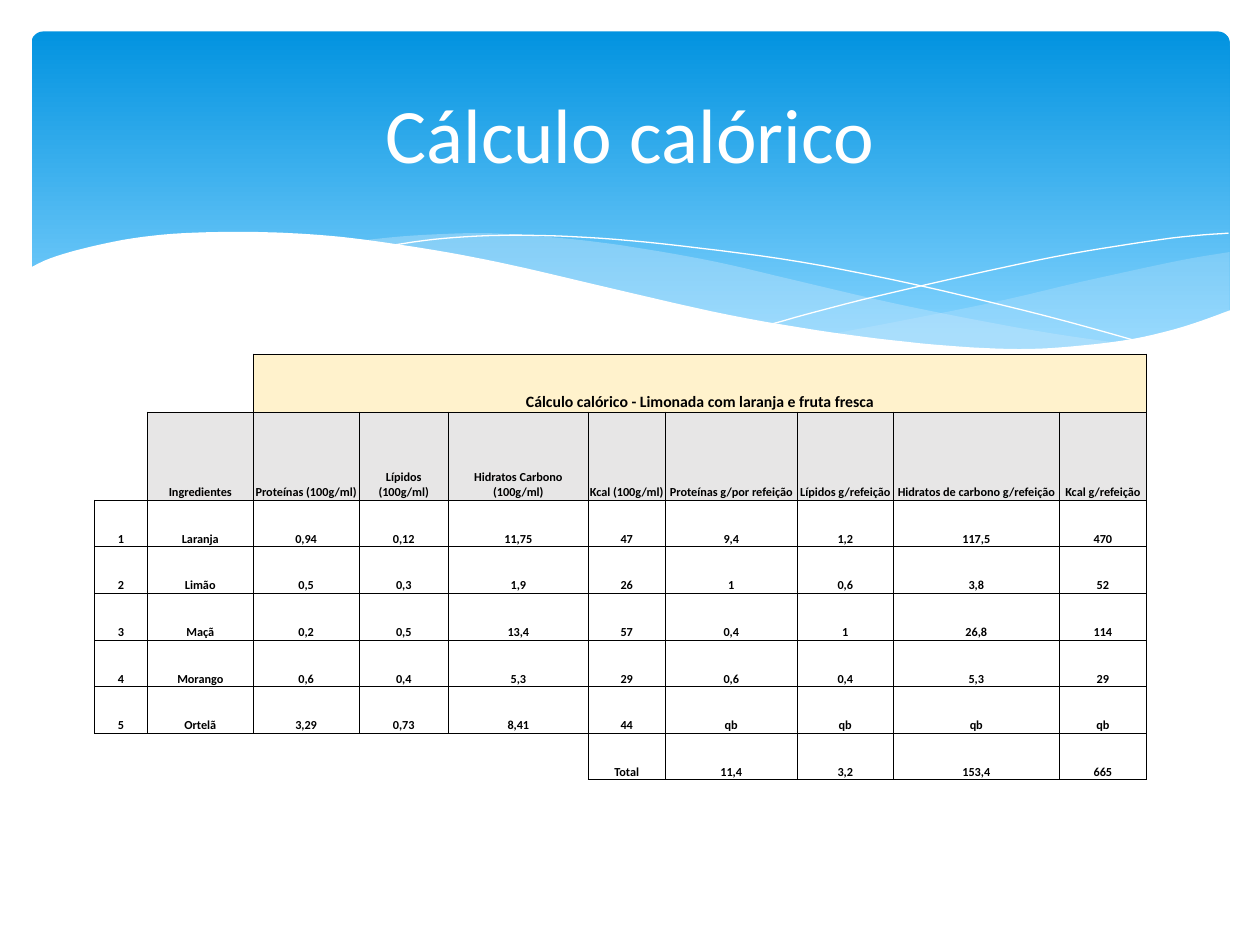
"""Build the calorie table slide with its blue wave header."""
from pptx import Presentation, util as u
from pptx.dml.color import RGBColor
from pptx.enum import shapes, text
from pptx.oxml import parse_xml, ns

WHITE = RGBColor(255, 255, 255)
BLACK = RGBColor(0, 0, 0)
DEEP = RGBColor(0x02, 0x93, 0xE0)
SKY = RGBColor(0x83, 0xD3, 0xFE)
PALE = RGBColor(0xC6, 0xE7, 0xFC)
CREAM = RGBColor(0xFF, 0xF2, 0xCC)
GREY = RGBColor(0xE7, 0xE6, 0xE6)


def smooth(knots, steps=5):
    """Return a Catmull-Rom curve through the knots, in thousandths of an inch."""
    ends = [knots[0], *knots, knots[-1]]
    curve = []
    for a, b, c, d in zip(ends, ends[1:], ends[2:], ends[3:]):
        for t in (i / steps for i in range(steps)):
            curve.append([round(500 * (2 * q + (r - p) * t + (2 * p - 5 * q + 4 * r - s) * t**2
                                       + (3 * q - p - 3 * r + s) * t**3))
                          for p, q, r, s in zip(a, b, c, d)])
    return curve + [[round(1000 * v) for v in knots[-1]]]


def wave(edges, color=None, alpha=100):
    """Draw a filled wave, or a thin white line when no color is given."""
    dots = [dot for edge in edges for dot in smooth(edge)]
    pen = page.shapes.build_freeform(*dots[0], scale=914.4)
    pen.add_line_segments(dots[1:], close=color is not None)
    form = pen.convert_to_shape()
    form.shadow.inherit = False
    if color is None:
        form.fill.background()
        form.line.color.rgb = WHITE
        form.line.width = u.Pt(0)
        return
    form.line.fill.background()
    form.fill.solid()
    form.fill.fore_color.rgb = color
    if alpha < 100:
        tint = form.fill._xPr.find(".//" + ns.qn("a:srgbClr"))
        tint.append(parse_xml(f'<a:alpha {ns.nsdecls("a")} val="{alpha * 1000}"/>'))


deck = Presentation()
deck.slide_width, deck.slide_height = u.Inches(10), u.Inches(7.5)
page = deck.slides.add_slide(deck.slide_layouts[5])
page.background.fill.solid()
page.background.fill.fore_color.rgb = WHITE

band = page.shapes.add_shape(shapes.MSO_SHAPE.ROUNDED_RECTANGLE, *map(u.Inches, (0.25, 0.25, 9.51, 2.7)))
band.adjustments[0] = 0.034
band.shadow.inherit = False
band.line.fill.background()
band.fill.gradient()
band.fill.gradient_angle = 270
for stop, color, place in zip(band.fill.gradient_stops, (DEEP, SKY), (0, 0.9)):
    stop.color.rgb = color
    stop.position = place

wave([[(9.76, 2), (9.35, 2.07), (8.61, 2.23), (7.79, 2.42), (6.61, 2.65)],
      [(6.61, 2.65), (7.05, 2.71), (7.57, 2.76), (8.03, 2.78), (8.54, 2.76),
       (8.97, 2.7), (9.42, 2.59), (9.76, 2.47)]], PALE, 29)
wave([[(8.93, 2.73), (8.37, 2.65), (7.75, 2.54), (7.06, 2.4), (6.29, 2.22), (5.69, 2.08),
       (5.14, 1.98), (4.65, 1.91), (4.2, 1.87), (3.8, 1.85), (3.28, 1.87), (2.86, 1.91)],
      [(2.86, 1.91), (3.42, 1.99), (4.04, 2.11), (4.91, 2.32), (5.66, 2.48), (6.34, 2.61),
       (6.95, 2.7), (7.48, 2.76), (7.96, 2.78), (8.48, 2.77), (8.93, 2.73)]], PALE, 40)
wave([[(3.09, 1.95), (3.44, 1.9), (3.87, 1.87), (4.33, 1.87), (4.89, 1.9), (5.56, 1.97),
       (6.36, 2.08), (7.27, 2.26), (8.31, 2.51), (9.07, 2.72)]])
wave([[(6.13, 2.57), (6.72, 2.41), (7.48, 2.23), (8.36, 2.04), (8.95, 1.94),
       (9.38, 1.88), (9.75, 1.85)]])
wave([[(9.77, 2.46), (9.4, 2.59), (8.99, 2.69), (8.5, 2.75), (8.09, 2.77), (7.61, 2.75),
       (7.08, 2.7), (6.48, 2.62), (5.79, 2.5), (5.03, 2.33), (4.18, 2.13), (3.65, 2.02),
       (3.16, 1.94), (2.71, 1.88), (2.3, 1.85), (1.93, 1.84), (1.46, 1.85), (1.06, 1.89),
       (0.67, 1.97), (0.4, 2.05), (0.23, 2.13)],
      [(0.23, 3.29), (9.77, 3.29)]], WHITE)

title = page.shapes.title
page.shapes.element.append(title.element)
title.left, title.top, title.width, title.height = map(u.Inches, (0.5, 0.37, 9, 1.37))
title.text_frame.vertical_anchor = text.MSO_ANCHOR.MIDDLE
line = title.text_frame.paragraphs[0]
line.alignment = text.PP_ALIGN.CENTER
run = line.add_run()
run.text = "Cálculo calórico"
run.font.size, run.font.name = u.Pt(44), "Calibri"
run.font.color.rgb = WHITE

rows = [
    ["Cálculo calórico - Limonada com laranja e fruta fresca"] + [""] * 7,
    ["Ingredientes", "Proteínas (100g/ml)", "Lípidos (100g/ml)", "Hidratos Carbono (100g/ml)",
     "Kcal (100g/ml)", "Proteínas g/por refeição", "Lípidos g/refeição",
     "Hidratos de carbono g/refeição", "Kcal g/refeição"],
    ["1", "Laranja", "0,94", "0,12", "11,75", "47", "9,4", "1,2", "117,5", "470"],
    ["2", "Limão", "0,5", "0,3", "1,9", "26", "1", "0,6", "3,8", "52"],
    ["3", "Maçã", "0,2", "0,5", "13,4", "57", "0,4", "1", "26,8", "114"],
    ["4", "Morango", "0,6", "0,4", "5,3", "29", "0,6", "0,4", "5,3", "29"],
    ["5", "Ortelã", "3,29", "0,73", "8,41", "44", "qb", "qb", "qb", "qb"],
    ["Total", "11,4", "3,2", "153,4", "665"],
]
wide = [0.42, 0.84, 0.84, 0.71, 1.11, 0.61, 1.05, 0.76, 1.32, 0.69]
tall = [0.46, 0.7] + [0.37] * 6
count = len(wide)
frame = page.shapes.add_table(len(rows), count, *map(u.Inches, (0.75, 2.81, sum(wide), sum(tall))))
grid = frame.table
grid.first_row = grid.horz_banding = False
grid._tbl.tblPr.find(ns.qn("a:tableStyleId")).text = "{2D5ABB26-0587-4C30-8999-92F81FD0307C}"
for col, size in zip(grid.columns, wide):
    col.width = u.Inches(size)
for row, size in zip(grid.rows, tall):
    row.height = u.Inches(size)
grid.cell(0, 2).merge(grid.cell(0, count - 1))

used = {(r, c) for r, row in enumerate(rows) for c in range(count - len(row), count)}
sides = {"lnL": (0, -1), "lnR": (0, 1), "lnT": (-1, 0), "lnB": (1, 0)}
for r, row in enumerate(rows):
    for c in range(count):
        cell = grid.cell(r, c)
        cell.margin_left = cell.margin_right = cell.margin_top = u.Inches(0.01)
        cell.margin_bottom = 0
        cell.vertical_anchor = text.MSO_ANCHOR.BOTTOM
        for side, (down, right) in sides.items():
            if used & {(r, c), (r + down, c + right)}:
                cell._tc.get_or_add_tcPr().append(parse_xml(
                    f'<a:{side} {ns.nsdecls("a")} w="6350"><a:solidFill>'
                    f'<a:srgbClr val="{BLACK}"/></a:solidFill></a:{side}>'))
        if (r, c) in used and r < 2:
            cell.fill.solid()
            cell.fill.fore_color.rgb = (CREAM, GREY)[r]
        else:
            cell.fill.background()
        word = row[c - count + len(row)] if (r, c) in used else ""
        if word:
            line = cell.text_frame.paragraphs[0]
            line.alignment = text.PP_ALIGN.CENTER
            run = line.add_run()
            run.text = word
            run.font.size, run.font.name = u.Pt(7 if r else 9), "Calibri"
            run.font.bold = True
            run.font.color.rgb = BLACK

deck.save("out.pptx")
